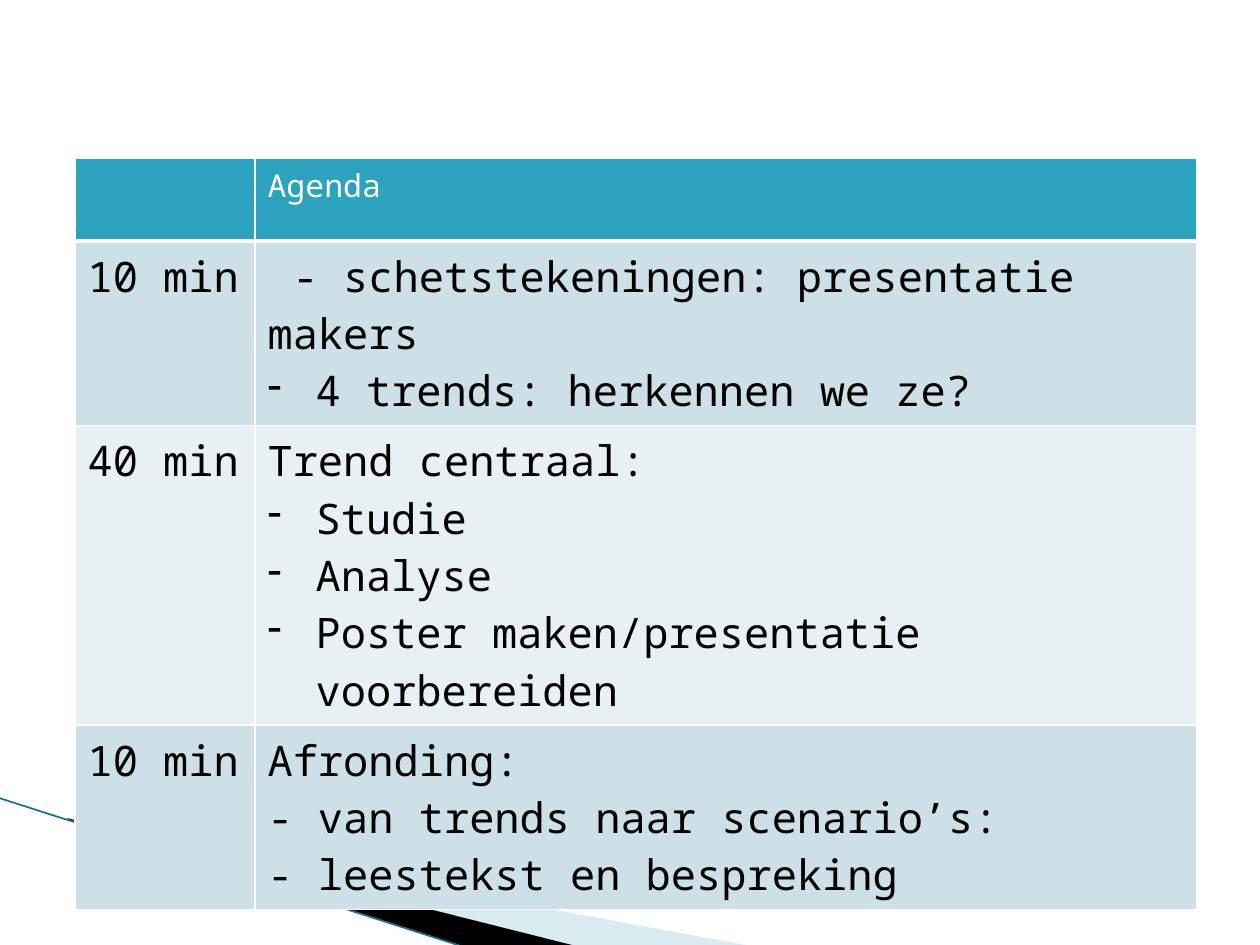
import pptx
import pptx.util
import pptx.dml.color
import pptx.enum.shapes
import pptx.oxml
import pptx.oxml.ns
from lxml import etree

RGB = pptx.dml.color.RGBColor
WHITE = RGB(0xFF, 0xFF, 0xFF)
BLACK = RGB(0x00, 0x00, 0x00)
TEAL = RGB(0x2D, 0xA2, 0xBF)
DARK = RGB(0x1A, 0x70, 0x86)
SKY = RGB(0xA0, 0xCB, 0xDC)
BAND = RGB(0xCD, 0xE0, 0xE8)
PALE = RGB(0xE8, 0xF0, 0xF4)
FONT = "Noto Sans Mono"
PX = 914400 / 126
qn = pptx.oxml.ns.qn


def px(n):
    return pptx.util.Emu(round(n * PX))


def write(par, text, size=24, color=BLACK, dash=False):
    if dash:
        props = par._p.get_or_add_pPr()
        props.set("marL", str(px(48)))
        props.set("indent", str(-px(48)))
        etree.SubElement(props, qn("a:buChar")).set("char", "-")
    run = par.add_run()
    run.text = text
    run.font.name = FONT
    run.font.size = pptx.util.Pt(size)
    run.font.color.rgb = color


deck = pptx.Presentation()
deck.slide_width = px(1260)
deck.slide_height = px(945)
slide = deck.slides.add_slide(deck.slide_layouts[6])

wedges = [
    (SKY, 40, [(69, 820), (750, 946), (575, 946), (69, 819)]),
    (BLACK, 100, [(67, 818), (576, 946), (469, 948), (68, 819)]),
]
for color, alpha, points in wedges:
    pen = slide.shapes.build_freeform(*points[0], scale=PX)
    pen.add_line_segments(points[1:], close=True)
    wedge = pen.convert_to_shape()
    wedge.shadow.inherit = False
    wedge.line.fill.background()
    wedge.fill.solid()
    wedge.fill.fore_color.rgb = color
    if alpha < 100:
        tint = wedge._element.spPr.find(".//" + qn("a:srgbClr"))
        etree.SubElement(tint, qn("a:alpha")).set("val", str(alpha * 1000))

edge = slide.shapes.add_connector(
    pptx.enum.shapes.MSO_CONNECTOR.STRAIGHT, px(-1), px(798), px(467), px(948))
edge.line.color.rgb = DARK
edge.line.width = pptx.util.Pt(0.95)
etree.SubElement(edge._element.spPr, qn("a:effectLst"))

rows = [
    (83, TEAL, "", [("Agenda", False)]),
    (131, BAND, "10 min", [
        (" - schetstekeningen: presentatie makers", False),
        ("4 trends: herkennen we ze?", True)]),
    (299, PALE, "40 min", [
        ("Trend centraal:", False),
        ("Studie", True),
        ("Analyse", True),
        ("Poster maken/presentatie voorbereiden", True)]),
    (158, BAND, "10 min", [
        ("Afronding:", False),
        ("- van trends naar scenario’s:", False),
        ("- leestekst en bespreking", False)]),
]
high = sum(row[0] for row in rows)
table = slide.shapes.add_table(
    len(rows), 2, px(75), px(158), px(1122), px(high)).table
for col, wide in zip(table.columns, (180, 942)):
    col.width = px(wide)

for r, (tall, fill, time, items) in enumerate(rows):
    table.rows[r].height = px(tall)
    head = r == 0
    style = dict(size=18, color=WHITE) if head else {}
    for c, lines in enumerate(([(time, False)], items)):
        cell = table.cell(r, c)
        cell.fill.solid()
        cell.fill.fore_color.rgb = fill
        for i, side in enumerate("LRTB"):
            wide = 3 if head and side == "B" else 1
            rule = etree.Element(qn("a:ln" + side), w=str(pptx.util.Pt(wide)))
            paint = etree.SubElement(rule, qn("a:solidFill"))
            etree.SubElement(paint, qn("a:srgbClr")).set("val", str(WHITE))
            cell._tc.tcPr.insert(i, rule)
        frame = cell.text_frame
        for i, (text, dash) in enumerate(lines):
            par = frame.add_paragraph() if i else frame.paragraphs[0]
            if text:
                write(par, text, dash=dash, **style)

deck.save("out.pptx")
